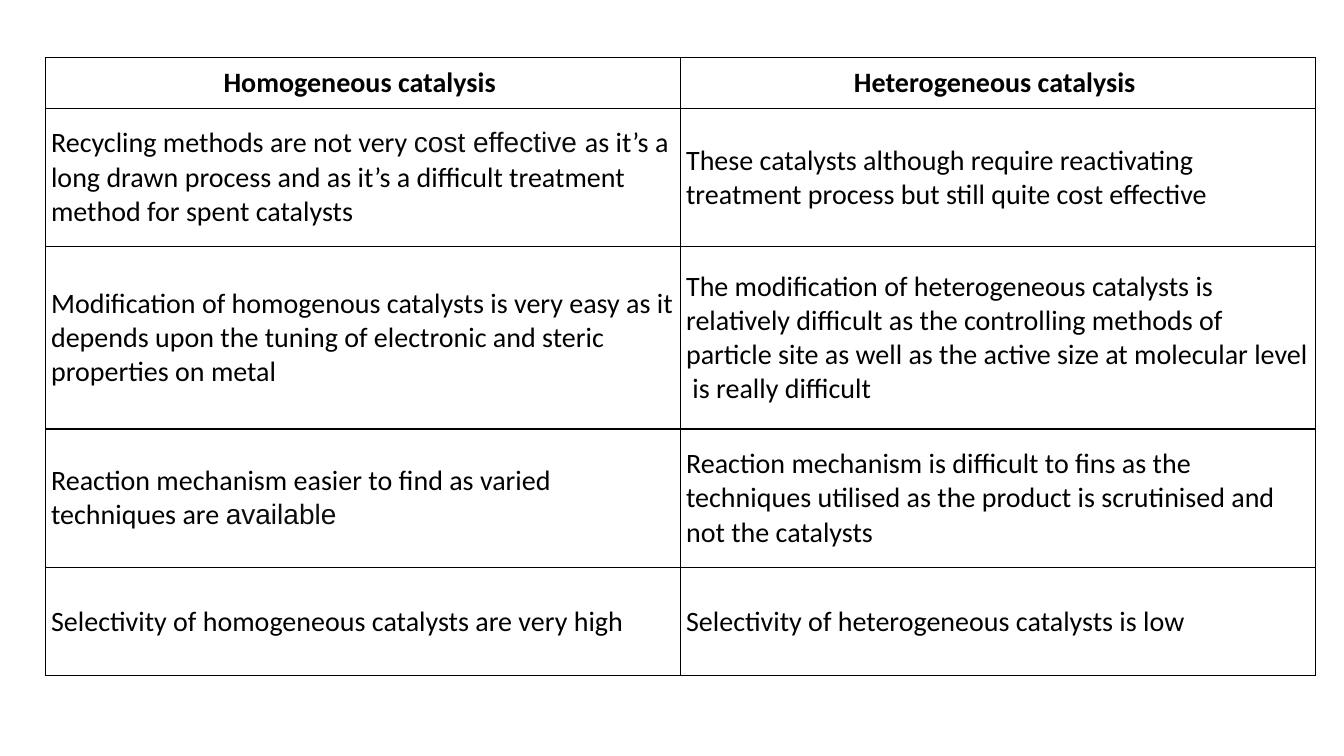
from lxml.etree import SubElement as Sub
from pptx import Presentation
from pptx.dml.color import RGBColor as Rgb
from pptx.enum.text import MSO_ANCHOR as Anchor, PP_ALIGN as Align
from pptx.oxml.ns import qn
from pptx.util import Pt

# A bar sets off the words in Arial
ROWS = [
    ("Homogeneous catalysis ", "Heterogeneous catalysis "),
    ("Recycling methods are not very |cost effective |as it’s a long drawn process "
     "and as it’s a difficult treatment method for spent catalysts",
     "These catalysts although require reactivating treatment process "
     "but still quite cost effective"),
    ("Modification of homogenous catalysts is very easy as it depends upon "
     "the tuning of electronic and steric properties on metal",
     "The modification of heterogeneous catalysts is relatively difficult as the "
     "controlling methods of particle site as well as the active size at "
     "molecular level  is really difficult"),
    ("Reaction mechanism easier to find as varied techniques are |available",
     "Reaction mechanism is difficult to fins as the techniques utilised as the "
     "product is scrutinised and not the catalysts"),
    ("Selectivity of homogeneous catalysts are very high",
     "Selectivity of heterogeneous catalysts is low"),
]
HEIGHTS = [36.5, 98.8, 130.2, 98.8, 77.5]
WIDTH = 453.6


def color(code):
    return Rgb.from_string(code)


def add_edges(cell, code="000000"):
    props = cell._tc.get_or_add_tcPr()
    for i, side in enumerate(("lnL", "lnR", "lnT", "lnB")):
        line = Sub(props, qn("a:" + side), w=str(Pt(1)))
        fill = Sub(line, qn("a:solidFill"))
        Sub(fill, qn("a:srgbClr"), val=code)
        props.insert(i, line)  # edges come before the cell fill


def fill_cell(cell, text, head):
    cell.fill.solid()
    cell.fill.fore_color.rgb = color("FFFFFF")
    add_edges(cell)
    cell.vertical_anchor = Anchor.MIDDLE
    cell.margin_left = cell.margin_right = Pt(4.1)
    cell.margin_top = cell.margin_bottom = Pt(2)
    para = cell.text_frame.paragraphs[0]
    para.alignment = Align.CENTER if head else Align.LEFT
    for i, part in enumerate(text.split("|")):
        run = para.add_run()
        run.text = part
        font = run.font
        font.size, font.bold = Pt(20), head
        font.name = "Arial" if i % 2 else "Calibri"
        font.color.rgb = color("0D0D0D" if i % 2 else "000000")


def add_grid(slide):
    frame = slide.shapes.add_table(len(ROWS), 2, Pt(32.4), Pt(41),
                                   Pt(2 * WIDTH), Pt(sum(HEIGHTS)))
    table = frame.table
    table.horz_banding = False
    table.first_row = False
    for col in table.columns:
        col.width = Pt(WIDTH)
    for r, (texts, height) in enumerate(zip(ROWS, HEIGHTS)):
        table.rows[r].height = Pt(height)
        for c, text in enumerate(texts):
            fill_cell(table.cell(r, c), text, r == 0)


def main():
    deck = Presentation()
    deck.slide_width, deck.slide_height = Pt(960), Pt(540)
    slide = deck.slides.add_slide(deck.slide_layouts[6])
    add_grid(slide)
    deck.save("out.pptx")


if __name__ == "__main__":
    main()
